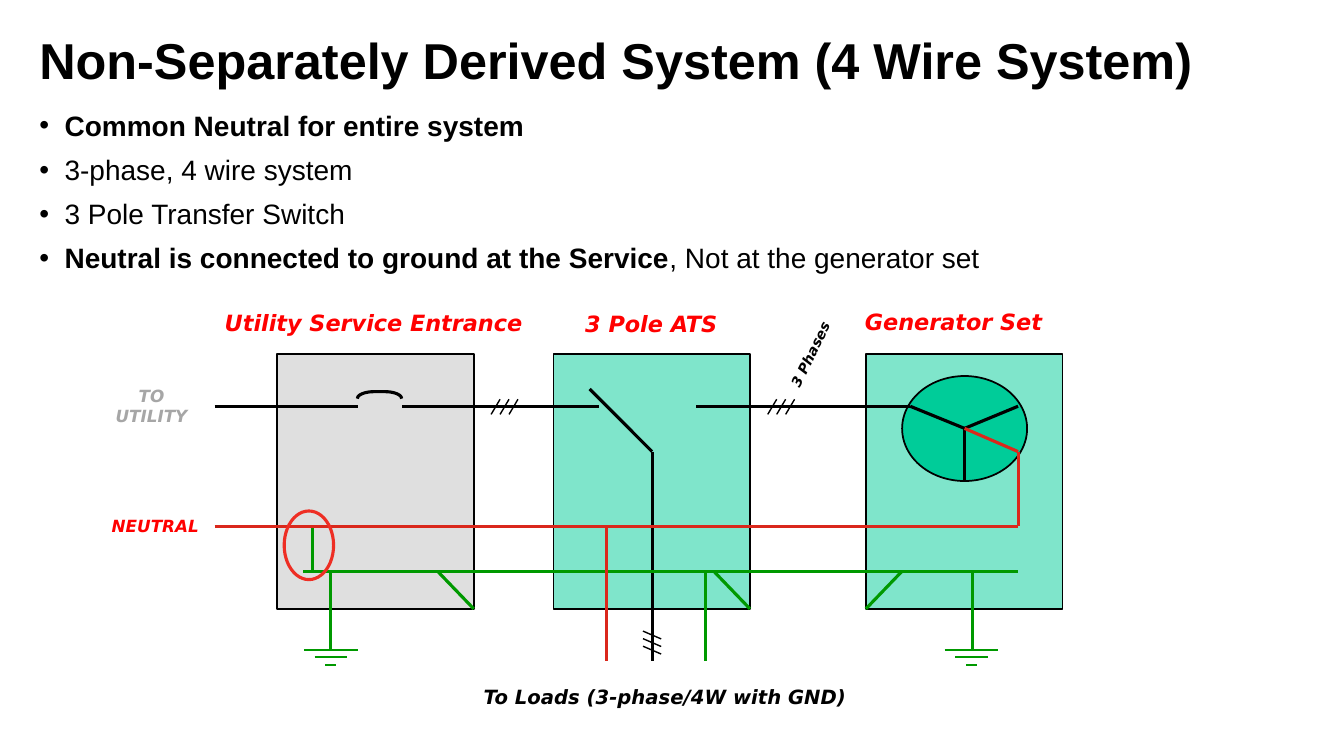
from lxml import etree
from pptx import Presentation
from pptx.dml.color import RGBColor
from pptx.enum import shapes, text
from pptx.oxml import ns
from pptx.util import Pt

COLORS = {
    "black": "000000", "red": "FF0000", "neutral": "DA281C", "bond": "EE2E24",
    "ground": "009900", "mint": "00CC99", "silver": "C0C0C0", "muted": "A6A6A6",
}
PHASE_Y, NEUTRAL_Y, GROUND_Y = 290.2, 375.8, 408.2
LOADS_Y = 472.3
PANEL_TOP, PANEL_W, PANEL_H = 252.7, 140.4, 182.2
SERVICE_X, SWITCH_X, GENSET_X = 198, 395.3, 618.5
WINDING_X, WINDING_Y = 689, 306


def rgb(name):
    return RGBColor.from_string(COLORS[name])


def add_run(paragraph, words, size, color="black", font="DejaVu Sans", bold=True, italic=True):
    run = paragraph.add_run()
    run.text = words
    run.font.size, run.font.name = Pt(size), font
    run.font.bold, run.font.italic = bold, italic
    run.font.color.rgb = rgb(color)


def place(item, left, top, width, height):
    item.left, item.top, item.width, item.height = Pt(left), Pt(top), Pt(width), Pt(height)


def fill_title(title):
    place(title, 20.9, 12.2, 846, 74.2)
    frame = title.text_frame
    frame.auto_size = text.MSO_AUTO_SIZE.NONE
    frame.vertical_anchor = text.MSO_ANCHOR.TOP
    heading = frame.paragraphs[0]
    heading.alignment = text.PP_ALIGN.LEFT
    heading.line_spacing = Pt(48)
    add_run(heading, "Non-Separately Derived System (4 Wire System)", 36, font="Arial", italic=False)


def fill_points(body, points):
    place(body, 20.9, 76.3, 704.9, 123.1)
    frame = body.text_frame
    frame.auto_size = text.MSO_AUTO_SIZE.NONE
    for index, parts in enumerate(points):
        point = frame.add_paragraph() if index else frame.paragraphs[0]
        point.line_spacing, point.space_before = 0.9, Pt(10)
        props = point._p.get_or_add_pPr()
        props.set("marL", str(Pt(18)))
        props.set("indent", str(Pt(-18)))
        etree.SubElement(props, ns.qn("a:buChar")).set("char", "•")
        for words, bold in parts:
            add_run(point, words, 20, font="Arial", bold=bold, italic=False)


def add_label(slide, box, lines, size, color, centered=False, rotation=0):
    label = slide.shapes.add_textbox(*map(Pt, box))
    label.rotation = rotation
    frame = label.text_frame
    frame.word_wrap = False
    frame.auto_size = text.MSO_AUTO_SIZE.SHAPE_TO_FIT_TEXT
    for index, words in enumerate(lines):
        line = frame.add_paragraph() if index else frame.paragraphs[0]
        line.alignment = text.PP_ALIGN.CENTER if centered else text.PP_ALIGN.LEFT
        add_run(line, words, size, color)
    return label


def add_outline(slide, kind, box, line="black", weight=1.25, fill=None, opacity=100):
    outline = slide.shapes.add_shape(kind, *map(Pt, box))
    outline.shadow.inherit = False
    outline.line.color.rgb, outline.line.width = rgb(line), Pt(weight)
    if fill:
        outline.fill.solid()
        outline.fill.fore_color.rgb = rgb(fill)
        if opacity < 100:
            tint = outline._element.spPr.find(ns.qn("a:solidFill"))[0]
            etree.SubElement(tint, ns.qn("a:alpha")).set("val", str(opacity * 1000))
    else:
        outline.fill.background()
    return outline


def add_wire(slide, color, *points, weight=2.25):
    for start, end in zip(points, points[1:]):
        wire = slide.shapes.add_connector(
            shapes.MSO_CONNECTOR.STRAIGHT, *map(Pt, (*start, *end)))
        wire.line.color.rgb, wire.line.width = rgb(color), Pt(weight)
        etree.SubElement(wire._element.spPr, ns.qn("a:effectLst"))


def add_phase_ticks(slide, x, y, step_x, step_y, half_x, half_y):
    for n in (-1, 0, 1):
        tick_x, tick_y = x + n * step_x, y + n * step_y
        add_wire(slide, "black", (tick_x + half_x, tick_y + half_y),
                 (tick_x - half_x, tick_y - half_y), weight=1)


def add_earth(slide, x, bar_x):
    add_wire(slide, "ground", (x, GROUND_Y), (x, 464))
    for n, half in enumerate((19.2, 11.5, 3.7)):
        y = 464 + n * 5.5
        add_wire(slide, "ground", (bar_x - half, y), (bar_x + half, y), weight=1.5)


def draw_panels(slide):
    for x, fill in ((SERVICE_X, "silver"), (SWITCH_X, "mint"), (GENSET_X, "mint")):
        add_outline(slide, shapes.MSO_SHAPE.RECTANGLE, (x, PANEL_TOP, PANEL_W, PANEL_H),
                    fill=fill, opacity=50)
    add_outline(slide, shapes.MSO_SHAPE.OVAL, (644.4, 268.6, 89.3, 75), fill="mint")


def draw_phases(slide):
    breaker = add_outline(slide, shapes.MSO_SHAPE.RIGHT_BRACKET, (268.6, 266.4, 5, 31.7), weight=2.25)
    breaker.rotation = 270
    breaker.adjustments[0] = 2.344
    for start, end in ((153.4, 255.6), (287.3, 427.7), (497.5, 650.2)):
        add_wire(slide, "black", (start, PHASE_Y), (end, PHASE_Y))
    add_wire(slide, "black", (421.2, 277.9), (465.8, 322.6), (465.8, LOADS_Y))
    add_wire(slide, "black", (650.2, PHASE_Y), (WINDING_X, WINDING_Y), (727.2, PHASE_Y))
    add_wire(slide, "black", (WINDING_X, WINDING_Y), (WINDING_X, 344.2))
    for x in (360.4, 558):
        add_phase_ticks(slide, x, PHASE_Y + 0.4, 6.4, 0, 3.2, -5.4)
    add_phase_ticks(slide, 465.8, 459, 0, 5.4, 6.5, 2.8)


def draw_neutral_and_ground(slide):
    add_wire(slide, "neutral", (WINDING_X, WINDING_Y), (727.2, 322.6), (727.2, NEUTRAL_Y))
    add_wire(slide, "ground", (223.2, NEUTRAL_Y), (223.2, GROUND_Y))
    add_wire(slide, "ground", (216.7, GROUND_Y), (727.2, GROUND_Y))
    add_wire(slide, "neutral", (433.4, NEUTRAL_Y), (433.4, LOADS_Y))
    add_wire(slide, "ground", (504, GROUND_Y), (504, LOADS_Y))
    add_wire(slide, "neutral", (153.4, NEUTRAL_Y), (727.2, NEUTRAL_Y))
    corners = ((SERVICE_X + PANEL_W, -1), (SWITCH_X + PANEL_W, -1), (GENSET_X, 1))
    for corner, inward in corners:
        add_wire(slide, "ground", (corner + inward * 25.7, GROUND_Y),
                 (corner, PANEL_TOP + PANEL_H))
    add_earth(slide, 236.2, 236.2)
    add_earth(slide, 694.8, 694)
    add_outline(slide, shapes.MSO_SHAPE.OVAL, (203, 365, 35.3, 49), line="bond", weight=2.25)


def draw_labels(slide):
    add_label(slide, (153.4, 217.4, 236.2, 28.8), ["Utility Service Entrance"], 16, "red")
    switch = add_label(slide, (407.5, 218.2, 116.6, 28.8), [" "], 9.9, "red")
    add_run(switch.text_frame.paragraphs[0], "3 Pole ATS", 16, "red")
    add_label(slide, (610.6, 216.7, 143.3, 28.8), ["Generator Set"], 16, "red")
    add_label(slide, (338.4, 486, 288.7, 26.6), ["To Loads (3-phase/4W with GND)"], 14, "black")
    add_label(slide, (72, 365, 77.8, 21.6), ["NEUTRAL"], 12, "red", centered=True)
    add_label(slide, (73.4, 272.2, 69.8, 36), ["TO", "UTILITY"], 12, "muted", centered=True)
    add_label(slide, (546.5, 243.4, 64.8, 19.4), ["3 Phases"], 10, "black", rotation=296.2)


def main():
    deck = Presentation()
    deck.slide_width, deck.slide_height = Pt(960), Pt(540)
    slide = deck.slides.add_slide(deck.slide_layouts[1])
    fill_title(slide.shapes.title)
    fill_points(slide.placeholders[1], [
        [("Common Neutral for entire system", True)],
        [("3-phase, 4 wire system", False)],
        [("3 Pole Transfer Switch", False)],
        [("Neutral is connected to ground at the Service", True),
         (", Not at the generator set", False)],
    ])
    draw_panels(slide)
    draw_phases(slide)
    draw_neutral_and_ground(slide)
    draw_labels(slide)
    deck.save("out.pptx")


if __name__ == "__main__":
    main()
